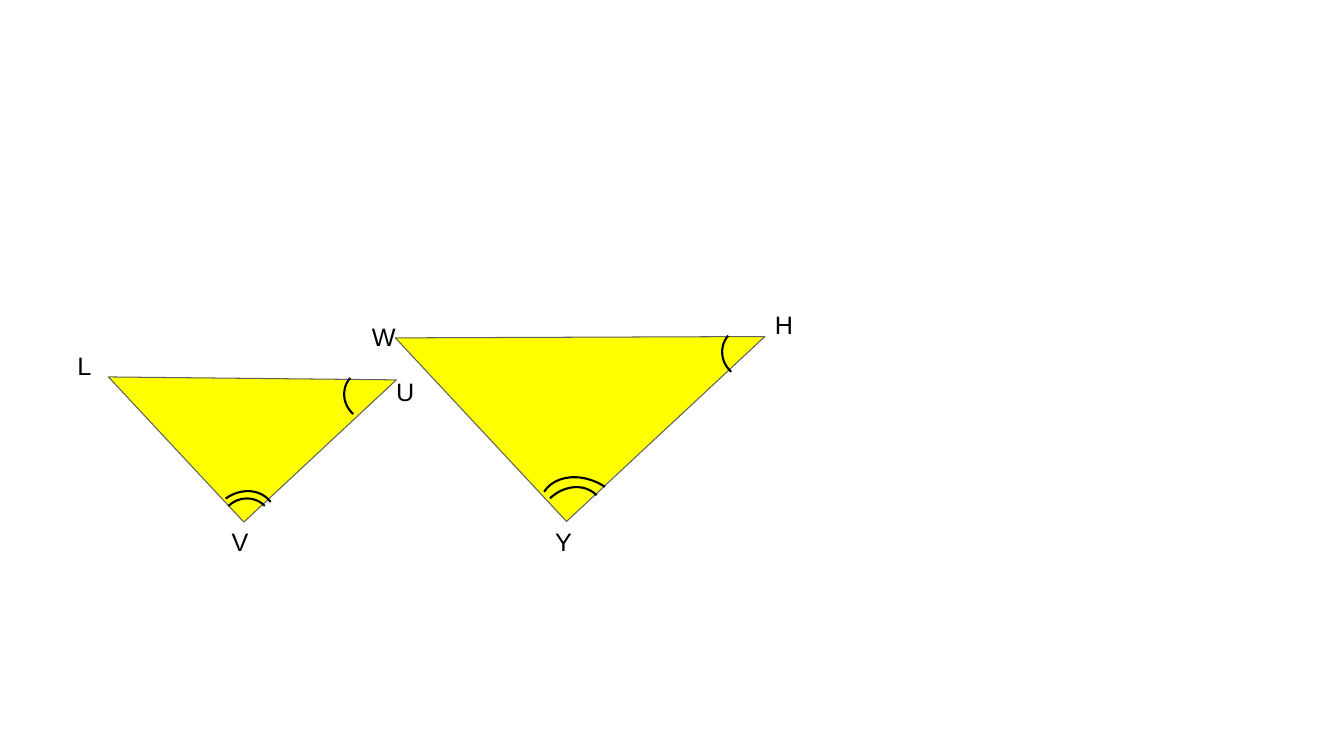
"""Draw two similar triangles with labelled corners and marked angles."""
from pptx import Presentation
from pptx.dml.color import RGBColor
from pptx.enum import shapes, text
from pptx.util import Pt

YELLOW = RGBColor(0xFF, 0xFF, 0x00)
GREY = RGBColor(0x5F, 0x5F, 0x5F)
BLACK = RGBColor(0x00, 0x00, 0x00)

deck = Presentation()
deck.slide_width, deck.slide_height = Pt(960), Pt(540)
slide = deck.slides.add_slide(deck.slide_layouts[6])


def label(words, left, top, size=18, font="Arial", color=BLACK):
    box = slide.shapes.add_textbox(Pt(left), Pt(top), Pt(43.2), Pt(29))
    frame = box.text_frame
    frame.word_wrap = True
    frame.auto_size = text.MSO_AUTO_SIZE.SHAPE_TO_FIT_TEXT
    run = frame.paragraphs[0].add_run()
    run.text = words
    run.font.size = Pt(size)
    run.font.name = font
    run.font.color.rgb = color


def outline(kind, place, turn, color, width):
    shape = slide.shapes.add_shape(kind, *map(Pt, place))
    shape.rotation = turn
    shape.shadow.inherit = False
    shape.line.color.rgb = color
    shape.line.width = Pt(width)
    shape.fill.background()
    return shape


for place in [(105.8, 199.4, 149, 141.8), (317.5, 151.2, 193.7, 179.3)]:
    part = outline(shapes.MSO_SHAPE.RIGHT_TRIANGLE, place, 317, GREY, 0.75)
    part.fill.solid()
    part.fill.fore_color.rgb = YELLOW

for name, left, top in [
    ("L", 48.2, 247), ("V", 158.4, 372.2), ("U", 275.8, 265),
    ("W", 258.5, 226.1), ("H", 546.5, 217.4), ("Y", 389.5, 372.2),
]:
    label(name, left, top)

for place, turn in [
    ((149, 352.1, 49, 41.8), 324),
    ((157, 356.4, 37.4, 36), 316),
    ((391, 335.5, 53.3, 69.1), 303),
    ((382.3, 349.9, 51.1, 43.2), 316),
    ((245.5, 264.2, 37.4, 36), 221),
    ((515.5, 234, 37.4, 36), 221),
]:
    outline(shapes.MSO_SHAPE.ARC, place, turn, BLACK, 1.5)

deck.save("out.pptx")
